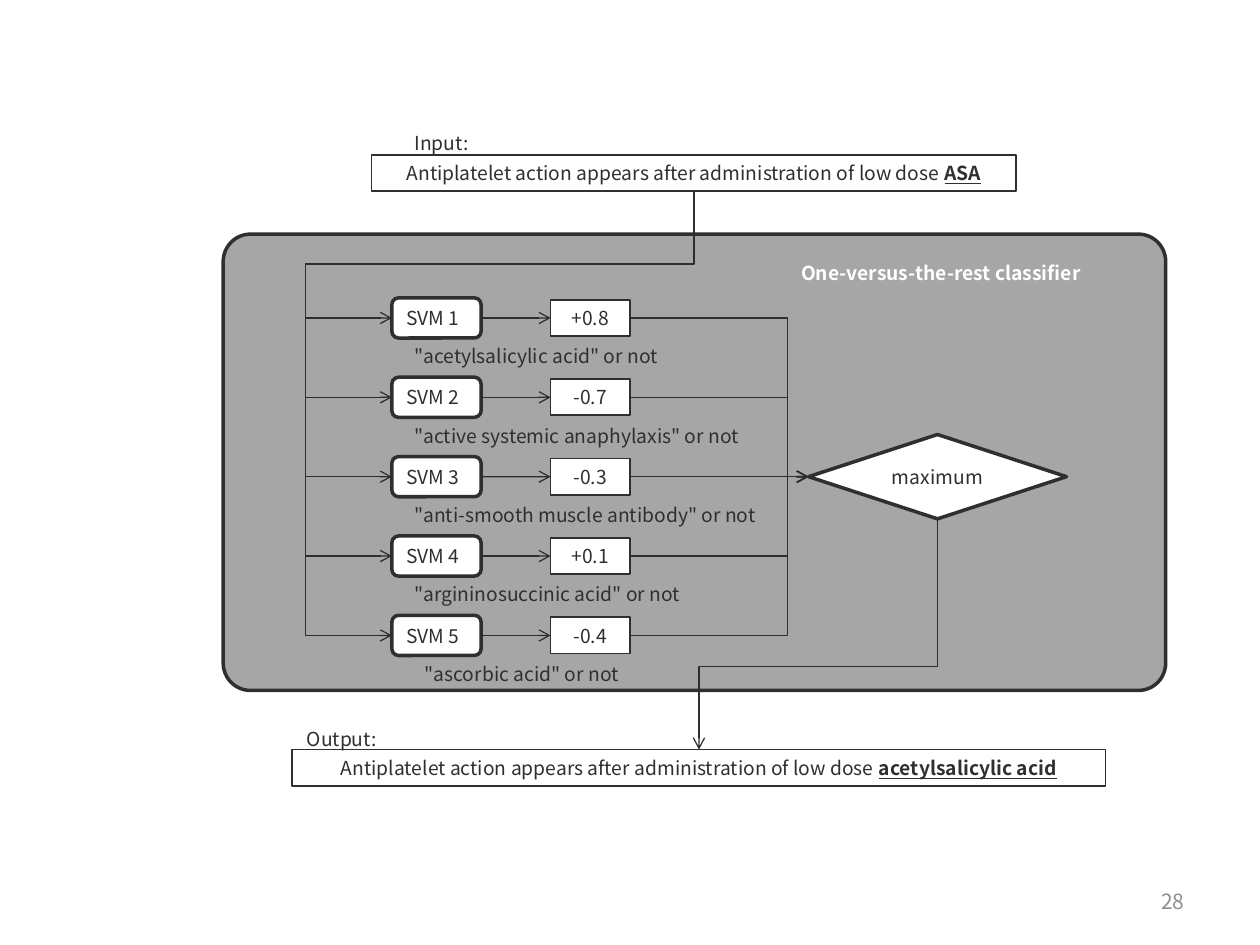
from lxml.etree import SubElement
from pptx import Presentation
from pptx.dml.color import RGBColor
from pptx.enum.shapes import MSO_CONNECTOR as Link, MSO_SHAPE as Preset
from pptx.enum.text import MSO_ANCHOR as Anchor, PP_ALIGN as Align
from pptx.oxml.ns import qn
from pptx.util import Cm, Pt

INK = RGBColor(0x2F, 0x2F, 0x2F)
LINK_INK = RGBColor(0x2E, 0x2E, 0x2E)
PANEL_GREY = RGBColor(0xA6, 0xA6, 0xA6)
NUMBER_GREY = RGBColor(0x8F, 0x8F, 0x8F)
WHITE = RGBColor(0xFF, 0xFF, 0xFF)
FONT = "Noto Sans CJK JP"
TOP, LEFT, BOTTOM, RIGHT = range(4)

SENTENCE = "Antiplatelet action appears after administration of low dose "
INPUT_TERM = "ASA"
OUTPUT_TERM = "acetylsalicylic acid"
CLASSIFIERS = [
    ("SVM 1", "+0.8", '"acetylsalicylic acid" or not', 8.1, 5.61),
    ("SVM 2", "-0.7", '"active systemic anaphylaxis" or not', 8.1, 7.8),
    ("SVM 3", "-0.3", '"anti-smooth muscle antibody" or not', 8.1, 8.15),
    ("SVM 4", "+0.1", '"argininosuccinic acid" or not', 8.1, 6.05),
    ("SVM 5", "-0.4", '"ascorbic acid" or not', 8.31, 4.6),
]

FIRST_ROW, ROW_PITCH = 6.41, 1.6
SVM_HEIGHT, TEXT_HEIGHT = 0.81, 0.73
TRUNK_X, TRUNK_Y = 6.15, 5.32
JOIN_X, OUTPUT_TURN_Y = 15.87, 13.44

presentation = Presentation()
presentation.slide_width, presentation.slide_height = Cm(25.4), Cm(19.05)
slide = presentation.slides.add_slide(presentation.slide_layouts[6])


def write(shape, runs, align, color=INK, size=11, bold=None):
    frame = shape.text_frame
    frame.word_wrap = True
    frame.vertical_anchor = Anchor.MIDDLE
    paragraph = frame.paragraphs[0]
    paragraph.alignment = align
    font = paragraph.font
    font.name, font.size, font.bold = FONT, Pt(size), bold
    font.color.rgb = color
    for text, emphasis in runs:
        run = paragraph.add_run()
        run.text = text
        if emphasis:
            run.font.bold = run.font.underline = True


def add_box(preset, box, line_width, runs=(), align=Align.CENTER, fill=WHITE):
    shape = slide.shapes.add_shape(preset, *map(Cm, box))
    shape.shadow.inherit = False
    shape.fill.solid()
    shape.fill.fore_color.rgb = fill
    shape.line.color.rgb = INK
    shape.line.width = Pt(line_width)
    write(shape, runs, align)
    return shape


def add_label(text, box, align=Align.LEFT, **style):
    write(slide.shapes.add_textbox(*map(Cm, box)), [(text, False)], align, **style)


def add_arrow(kind, start, start_side, end, end_side):
    connector = slide.shapes.add_connector(kind, 0, 0, 0, 0)
    connector.begin_connect(start, start_side)
    connector.end_connect(end, end_side)
    connector.line.color.rgb = LINK_INK
    connector.line.width = Pt(0.75)
    SubElement(connector.line._get_or_add_ln(), qn("a:tailEnd"), type="arrow")
    SubElement(connector._element.spPr, qn("a:effectLst"))
    return connector


def set_bends(connector, *ratios):
    geometry = connector._element.spPr.find(qn("a:prstGeom"))
    geometry.set("prst", f"bentConnector{len(ratios) + 2}")
    guides = geometry.get_or_add_avLst()
    for number, ratio in enumerate(ratios, 1):
        SubElement(guides, qn("a:gd"), name=f"adj{number}",
                   fmla=f"val {round(ratio * 100000)}")


def bend_down(connector, turn_y, trunk_x=None):
    x, y = connector.begin_x, connector.begin_y
    run, drop = x - connector.end_x, connector.end_y - y
    ratios = [(Cm(turn_y) - y) / drop]
    if trunk_x is not None:
        ratios.append((x - Cm(trunk_x)) / run)
    transform = connector._element.spPr.find(qn("a:xfrm"))
    transform.attrib.pop("flipH", None)
    transform.set("rot", "5400000")
    connector.left = round(x - run / 2 - drop / 2)
    connector.top = round(y + drop / 2 - run / 2)
    connector.width, connector.height = drop, run
    set_bends(connector, *ratios)


add_box(Preset.ROUNDED_RECTANGLE, (4.5, 4.72, 19, 9.2), 2,
        fill=PANEL_GREY).adjustments[0] = 0.06
add_label("28", (18.21, 17.65, 5.92, 1.02), Align.RIGHT, color=NUMBER_GREY, size=12)
add_label("One-versus-the-rest classifier", (15.9, 5.13, 6.68, TEXT_HEIGHT),
          color=WHITE, bold=True)
input_box = add_box(Preset.RECTANGLE, (7.49, 3.12, 13, TEXT_HEIGHT), 1,
                    [(SENTENCE, False), (INPUT_TERM, True)])
output_box = add_box(Preset.RECTANGLE, (5.89, 15.11, 16.4, TEXT_HEIGHT), 1,
                     [(SENTENCE, False), (OUTPUT_TERM, True)])
maximum = add_box(Preset.FLOWCHART_DECISION, (16.3, 8.76, 5.2, 1.7), 2,
                  [("maximum", False)])

for row, (name, score, target, target_x, target_width) in enumerate(CLASSIFIERS):
    middle = FIRST_ROW + row * ROW_PITCH
    svm = add_box(Preset.ROUNDED_RECTANGLE,
                  (7.9, middle - SVM_HEIGHT / 2, 1.8, SVM_HEIGHT), 2,
                  [(name, False)], Align.LEFT)
    score_box = add_box(Preset.RECTANGLE,
                        (11.1, middle - TEXT_HEIGHT / 2, 1.6, TEXT_HEIGHT), 1,
                        [(score, False)])
    add_label(target, (target_x, middle + SVM_HEIGHT / 2, target_width, TEXT_HEIGHT))
    bend_down(add_arrow(Link.ELBOW, input_box, BOTTOM, svm, LEFT), TRUNK_Y, TRUNK_X)
    add_arrow(Link.STRAIGHT, svm, RIGHT, score_box, LEFT)
    joining = add_arrow(Link.ELBOW, score_box, RIGHT, maximum, LEFT)
    set_bends(joining, (Cm(JOIN_X) - joining.begin_x) / joining.width)

bend_down(add_arrow(Link.ELBOW, maximum, BOTTOM, output_box, TOP), OUTPUT_TURN_Y)
add_label("Input:", (7.9, 2.52, 2, TEXT_HEIGHT), Align.CENTER)
add_label("Output:", (5.89, 14.53, 2, TEXT_HEIGHT), Align.CENTER)

presentation.save("out.pptx")
